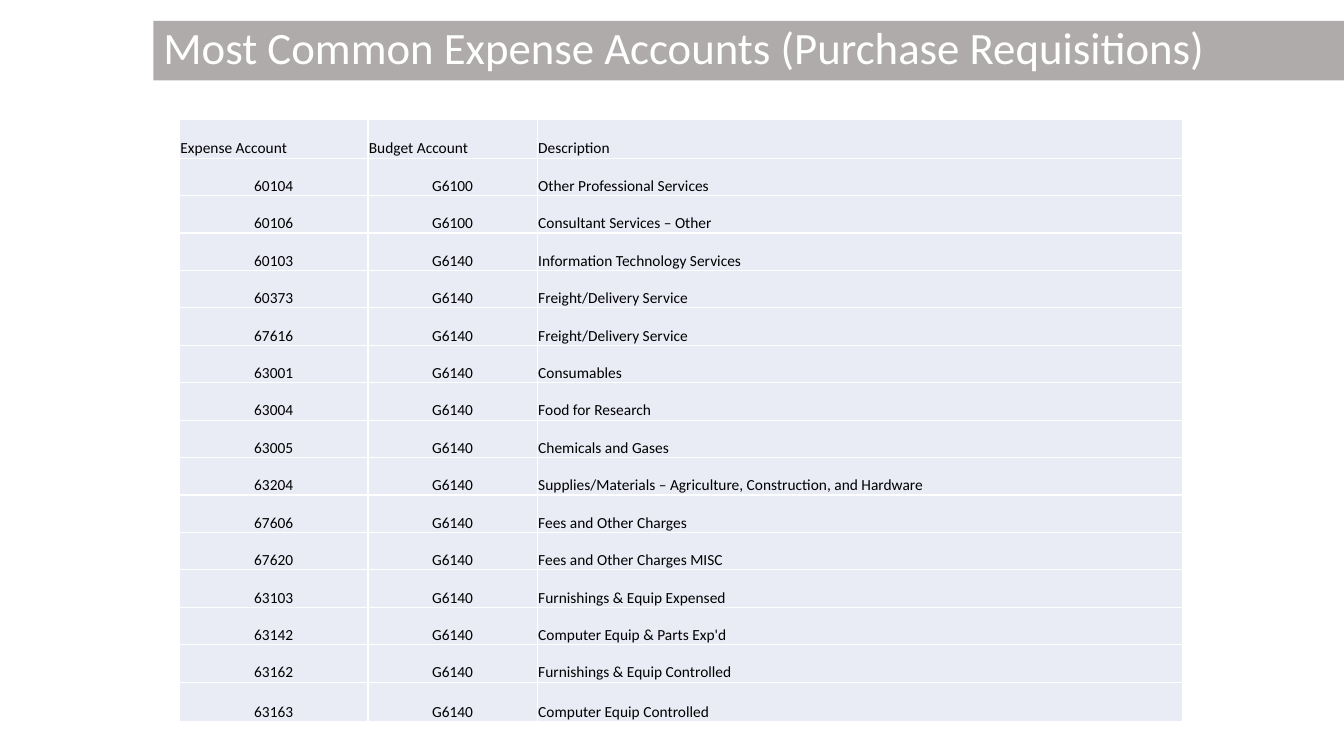
"""Build the slide listing the most common expense accounts."""
import lxml.etree
import pptx
import pptx.dml.color
import pptx.enum.text
import pptx.oxml.ns
import pptx.util

Pt = pptx.util.Pt
qn = pptx.oxml.ns.qn
RGBColor = pptx.dml.color.RGBColor
Align = pptx.enum.text.PP_ALIGN
Anchor = pptx.enum.text.MSO_ANCHOR

WHITE = RGBColor(0xFF, 0xFF, 0xFF)
BLACK = RGBColor(0x00, 0x00, 0x00)
BANNER_GREY = RGBColor(0xAF, 0xAB, 0xAB)
CELL_BLUE = RGBColor(0xE9, 0xEB, 0xF5)

HEADINGS = ("Expense Account", "Budget Account", "Description")
ACCOUNTS = (
    ("60104", "G6100", "Other Professional Services"),
    ("60106", "G6100", "Consultant Services – Other"),
    ("60103", "G6140", "Information Technology Services"),
    ("60373", "G6140", "Freight/Delivery Service"),
    ("67616", "G6140", "Freight/Delivery Service"),
    ("63001", "G6140", "Consumables"),
    ("63004", "G6140", "Food for Research"),
    ("63005", "G6140", "Chemicals and Gases"),
    ("63204", "G6140", "Supplies/Materials – Agriculture, Construction, and Hardware"),
    ("67606", "G6140", "Fees and Other Charges"),
    ("67620", "G6140", "Fees and Other Charges MISC"),
    ("63103", "G6140", "Furnishings & Equip Expensed"),
    ("63142", "G6140", "Computer Equip & Parts Exp'd"),
    ("63162", "G6140", "Furnishings & Equip Controlled"),
    ("63163", "G6140", "Computer Equip Controlled"),
)


class AccountSlide:
    font_name = "Calibri"

    def __init__(self, slide):
        self.slide = slide

    def add_text(self, paragraph, text, size, color, align):
        paragraph.alignment = align
        run = paragraph.add_run()
        run.text = text
        run.font.name = self.font_name
        run.font.size = Pt(size)
        run.font.color.rgb = color

    def banner(self, text, left, top, width, height):
        title = self.slide.shapes.title
        title.left, title.top = Pt(left), Pt(top)
        title.width, title.height = Pt(width), Pt(height)
        title.fill.solid()
        title.fill.fore_color.rgb = BANNER_GREY
        frame = title.text_frame
        frame.word_wrap = True
        frame.auto_size = pptx.enum.text.MSO_AUTO_SIZE.NONE
        frame.vertical_anchor = Anchor.TOP
        heading = frame.paragraphs[0]
        heading.line_spacing = 0.9
        heading.space_before = Pt(0)
        self.add_text(heading, text, 32, WHITE, Align.LEFT)

    def borders(self, cell):
        properties = cell._tc.get_or_add_tcPr()
        for side in ("lnL", "lnR", "lnT", "lnB"):
            line = lxml.etree.SubElement(properties, qn(f"a:{side}"), w=str(Pt(1)))
            fill = lxml.etree.SubElement(line, qn("a:solidFill"))
            lxml.etree.SubElement(fill, qn("a:srgbClr"), val=str(WHITE))

    def cell(self, cell, text, align):
        self.borders(cell)
        cell.fill.solid()
        cell.fill.fore_color.rgb = CELL_BLUE
        cell.vertical_anchor = Anchor.BOTTOM
        cell.margin_left = cell.margin_right = cell.margin_top = Pt(0.7)
        cell.margin_bottom = Pt(0)
        self.add_text(cell.text_frame.paragraphs[0], text, 11, BLACK, align)

    def table(self, entries, left, top, widths, heights):
        table = self.slide.shapes.add_table(
            len(entries), len(widths), Pt(left), Pt(top),
            Pt(sum(widths)), Pt(sum(heights))).table
        table.first_row = table.horz_banding = False
        for column, width in zip(table.columns, widths):
            column.width = Pt(width)
        for row, height in zip(table.rows, heights):
            row.height = Pt(height)
        for row, entry in enumerate(entries):
            for column, text in enumerate(entry):
                is_code = row > 0 and column < 2
                self.cell(table.cell(row, column), text,
                          Align.CENTER if is_code else Align.LEFT)


def main():
    deck = pptx.Presentation()
    deck.slide_width, deck.slide_height = Pt(960), Pt(540)
    page = AccountSlide(deck.slides.add_slide(deck.slide_layouts[5]))
    page.table((HEADINGS, *ACCOUNTS), 128.2, 85,
               (134.6, 121, 460.8), (28, *[26.75] * 14, 28))
    page.banner("Most Common Expense Accounts (Purchase Requisitions)",
                109.5, 15, 850.5, 42.5)
    deck.save("out.pptx")


if __name__ == "__main__":
    main()
